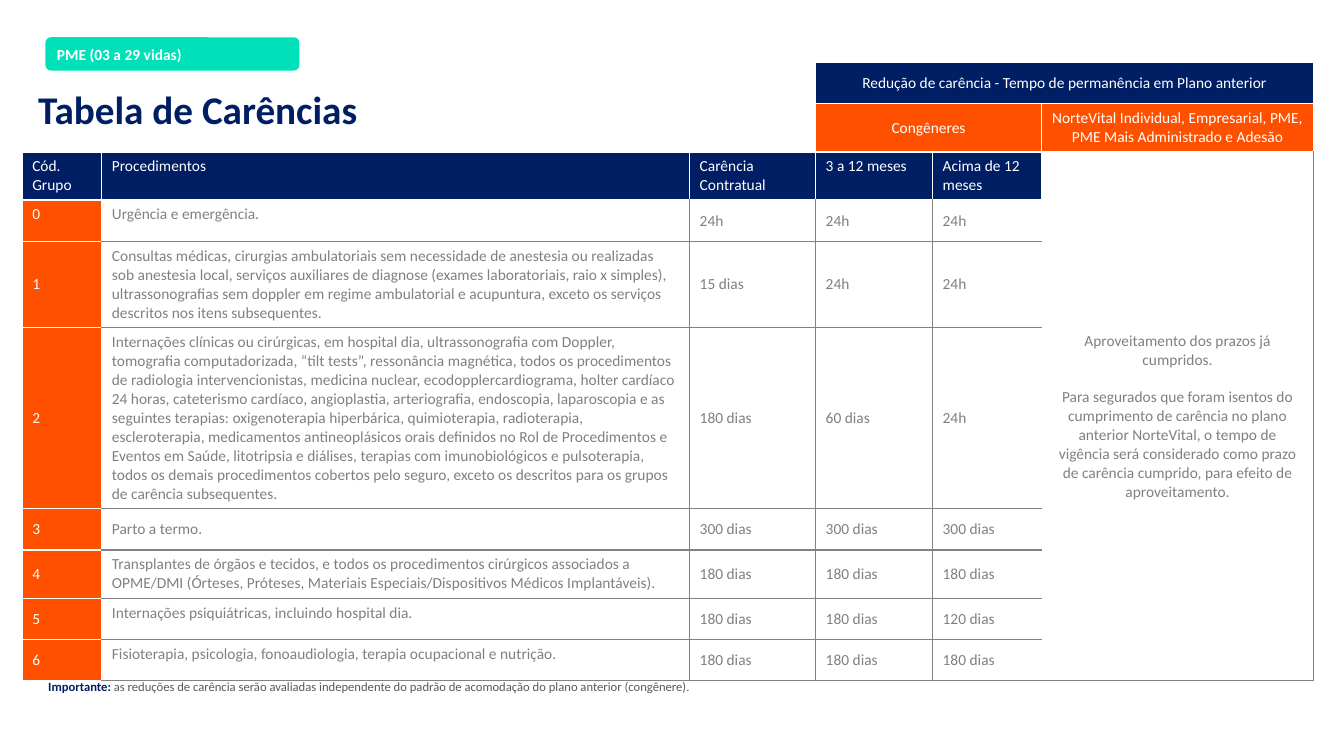
from dataclasses import dataclass
from typing import Any

from lxml import etree
from pptx import Presentation
from pptx.dml.color import RGBColor
from pptx.enum.shapes import MSO_SHAPE
from pptx.enum.text import MSO_ANCHOR, PP_ALIGN
from pptx.oxml.ns import qn
from pptx.util import Inches, Pt

LEFT, CENTER = PP_ALIGN.LEFT, PP_ALIGN.CENTER
TOP, MIDDLE = MSO_ANCHOR.TOP, MSO_ANCHOR.MIDDLE
ROUND = MSO_SHAPE.ROUNDED_RECTANGLE


@dataclass(frozen=True)
class Theme:
    font: str = "Calibri"
    navy: str = "001E64"
    orange: str = "FF5000"
    mint: str = "00E1B9"
    white: str = "FFFFFF"
    gray: str = "808080"
    line: str = "828282"
    note: str = "595959"
    title: int = 28
    body: int = 11
    small: int = 9


@dataclass(frozen=True)
class Box:
    left: int
    top: int
    width: int
    height: int


@dataclass(frozen=True)
class Group:
    text: str
    waits: tuple[str, str, str]
    anchors: tuple[Any, Any] = (MIDDLE, TOP)


@dataclass(frozen=True)
class Head:
    text: str
    row: int
    col: int
    span: int = 1
    fill: str = ""


THEME = Theme()

# Grid of 1333 columns by 750 rows
WIDE, HIGH = 1333, 750
COLS = (79, 583, 125, 116, 108, 270)
ROW, ROWS = 41, 10
GRID = Box(22, 62, sum(COLS), ROW * ROWS)
BADGE = Box(45, 37, 252, 33)
TITLE = Box(28, 85, 343, 43)
NOTE = Box(38, 669, 757, 25)

# Table content
HEADS = [
    Head("Redução de carência - Tempo de permanência em Plano anterior", 0, 3, 3, THEME.navy),
    Head("Congêneres", 1, 3, 2, THEME.orange),
    Head("NorteVital Individual, Empresarial, PME, PME Mais Administrado e Adesão",
         1, 5, 1, THEME.orange),
]
NAMES = ("Cód. Grupo", "Procedimentos", "Carência Contratual", "3 a 12 meses", "Acima de 12 meses")
GROUPS = [
    Group("Urgência e emergência.", ("24h", "24h", "24h"), (TOP, TOP)),
    Group("Consultas médicas, cirurgias ambulatoriais sem necessidade de anestesia ou "
          "realizadas sob anestesia local, serviços auxiliares de diagnose (exames "
          "laboratoriais, raio x simples), ultrassonografias sem doppler em regime "
          "ambulatorial e acupuntura, exceto os serviços descritos nos itens subsequentes.",
          ("15 dias", "24h", "24h")),
    Group("Internações clínicas ou cirúrgicas, em hospital dia, ultrassonografia com Doppler, "
          "tomografia computadorizada, “tilt tests”, ressonância magnética, todos os "
          "procedimentos de radiologia intervencionistas, medicina nuclear, "
          "ecodopplercardiograma, holter cardíaco 24 horas, cateterismo cardíaco, "
          "angioplastia, arteriografia, endoscopia, laparoscopia e as seguintes terapias: "
          "oxigenoterapia hiperbárica, quimioterapia, radioterapia, escleroterapia, "
          "medicamentos antineoplásicos orais definidos no Rol de Procedimentos e Eventos "
          "em Saúde, litotripsia e diálises, terapias com imunobiológicos e pulsoterapia, "
          "todos os demais procedimentos cobertos pelo seguro, exceto os descritos para os "
          "grupos de carência subsequentes.", ("180 dias", "60 dias", "24h")),
    Group("Parto a termo.", ("300 dias", "300 dias", "300 dias"), (MIDDLE, MIDDLE)),
    Group("Transplantes de órgãos e tecidos, e todos os procedimentos cirúrgicos associados a "
          "OPME/DMI (Órteses, Próteses, Materiais Especiais/Dispositivos Médicos "
          "Implantáveis).", ("180 dias", "180 dias", "180 dias")),
    Group("Internações psiquiátricas, incluindo hospital dia.",
          ("180 dias", "180 dias", "120 dias")),
    Group("Fisioterapia, psicologia, fonoaudiologia, terapia ocupacional e nutrição.",
          ("180 dias", "180 dias", "180 dias")),
]
CREDIT = (
    "Aproveitamento dos prazos já cumpridos.",
    "Para segurados que foram isentos do cumprimento de carência no plano anterior "
    "NorteVital, o tempo de vigência será considerado como prazo de carência cumprido, "
    "para efeito de aproveitamento.",
)


def unit(count: int) -> int:
    return Inches(count / 100)


def place(box: Box) -> tuple[int, ...]:
    return tuple(unit(n) for n in (box.left, box.top, box.width, box.height))


def say(frame: Any, text: str, *, size: int = THEME.body, color: str = THEME.white,
        bold: bool = False, align: Any = LEFT, gap: int = 0, lead: float = 1.0,
        join: bool = False) -> None:
    par = frame.paragraphs[-1]
    if par.runs and not join:
        par = frame.add_paragraph()
        par.space_before = Pt(gap)
    par.alignment, par.line_spacing = align, lead
    run = par.add_run()
    run.text = text
    font = run.font
    font.name, font.size, font.bold = THEME.font, Pt(size), bold
    font.color.rgb = RGBColor.from_string(color)


def edge(cell: Any, colors: tuple[str, ...]) -> None:
    props = cell._tc.get_or_add_tcPr()
    for spot, (side, color) in enumerate(zip("LRTB", colors)):
        line = etree.Element(qn(f"a:ln{side}"), w=str(Pt(1)))
        solid = etree.SubElement(line, qn("a:solidFill"))
        etree.SubElement(solid, qn("a:srgbClr"), val=color)
        props.insert(spot, line)


def style(cell: Any, *, fill: str = "", sides: str = "", anchor: Any = MIDDLE) -> Any:
    """Paint a cell; sides lists the white borders, the others are gray."""
    if fill:
        cell.fill.solid()
        cell.fill.fore_color.rgb = RGBColor.from_string(fill)
    else:
        cell.fill.background()
    edge(cell, tuple(THEME.white if s in sides else THEME.line for s in "LRTB"))
    cell.vertical_anchor = anchor
    return cell.text_frame


def block(table: Any, row: int, col: int, rows: int, cols: int, **look: Any) -> Any:
    for r in range(row, row + rows):
        for c in range(col, col + cols):
            style(table.cell(r, c), **look)
    first = table.cell(row, col)
    if rows * cols > 1:
        first.merge(table.cell(row + rows - 1, col + cols - 1))
    return first.text_frame


def draw_table(slide: Any) -> None:
    table = slide.shapes.add_table(ROWS, len(COLS), *place(GRID)).table
    table.first_row = table.horz_banding = False
    for col, width in zip(table.columns, COLS):
        col.width = unit(width)
    for row in table.rows:
        row.height = unit(ROW)

    # Headings
    block(table, 0, 0, 2, 3, sides="LRTB")
    for head in HEADS:
        frame = block(table, head.row, head.col, 1, head.span, fill=head.fill, sides="LRTB")
        say(frame, head.text, align=CENTER)
    for c, name in enumerate(NAMES):
        say(style(table.cell(2, c), fill=THEME.navy, sides="LRTB", anchor=TOP), name)

    # Merged right column
    frame = block(table, 2, 5, 8, 1, sides="LT")
    for text in CREDIT:
        say(frame, text, color=THEME.gray, align=CENTER, gap=13)

    # Procedure groups
    for code, group in enumerate(GROUPS):
        cells = table.rows[code + 3].cells
        top = "T" if code == 0 else ""
        say(style(cells[0], fill=THEME.orange, sides="LRTB", anchor=group.anchors[0]), str(code))
        say(style(cells[1], sides="L" + top, anchor=group.anchors[1]), group.text,
            color=THEME.gray)
        for c, wait in enumerate(group.waits, 2):
            say(style(cells[c], sides=top), wait, color=THEME.gray)


def add_box(slide: Any, box: Box) -> Any:
    frame = slide.shapes.add_textbox(*place(box)).text_frame
    frame.word_wrap = True
    return frame


def draw_badge(slide: Any) -> None:
    badge = slide.shapes.add_shape(ROUND, *place(BADGE))
    badge.shadow.inherit = False
    badge.fill.solid()
    badge.fill.fore_color.rgb = RGBColor.from_string(THEME.mint)
    badge.line.fill.background()
    badge.text_frame.vertical_anchor = MIDDLE
    say(badge.text_frame, "PME (03 a 29 vidas)", bold=True)


def main() -> None:
    deck = Presentation()
    deck.slide_width, deck.slide_height = unit(WIDE), unit(HIGH)
    slide = deck.slides.add_slide(deck.slide_layouts[6])
    draw_table(slide)
    say(add_box(slide, TITLE), "Tabela de Carências", size=THEME.title, color=THEME.navy,
        bold=True, lead=0.9)
    note = add_box(slide, NOTE)
    say(note, "Importante: ", size=THEME.small, color=THEME.navy, bold=True)
    say(note, "as reduções de carência serão avaliadas independente do padrão de acomodação "
        "do plano anterior (congênere).", size=THEME.small, color=THEME.note, join=True)
    draw_badge(slide)
    deck.save("out.pptx")


if __name__ == "__main__":
    main()
